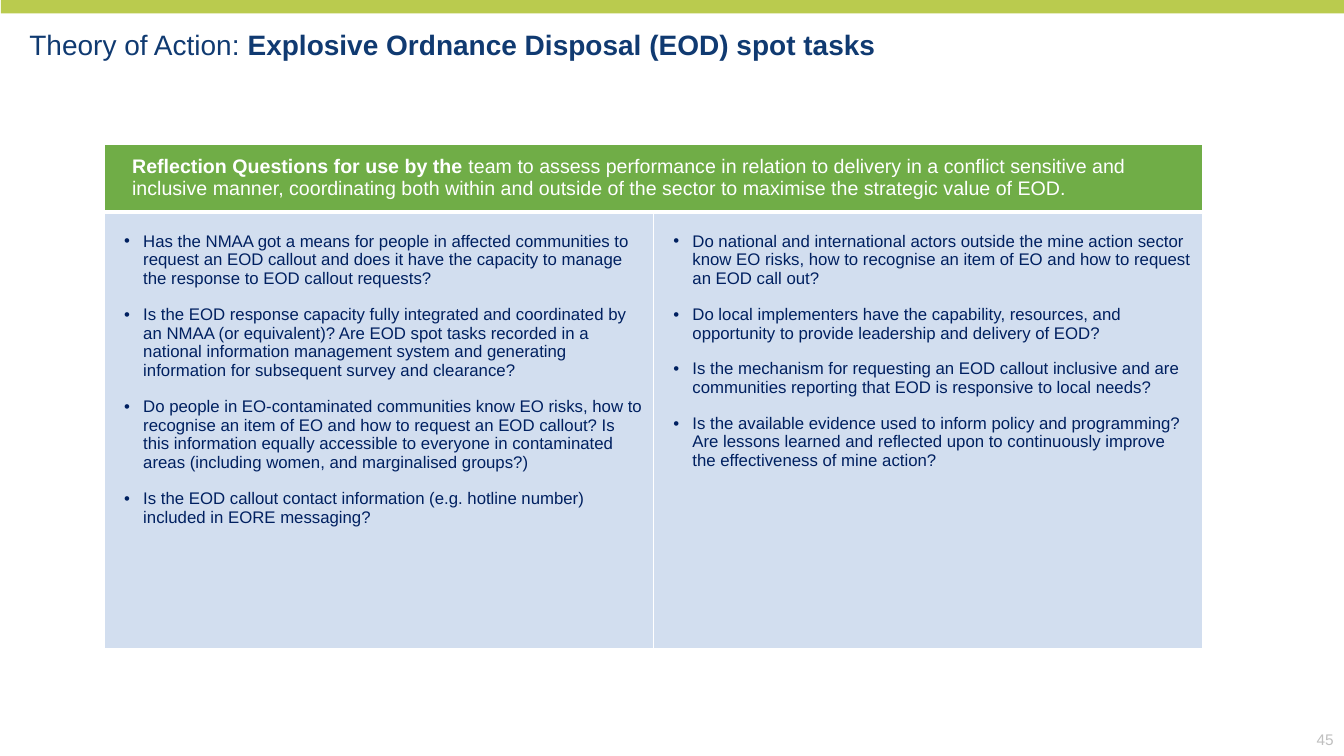
from lxml.etree import SubElement
from pptx import Presentation
from pptx.dml.color import RGBColor
from pptx.enum.shapes import MSO_SHAPE
from pptx.enum.text import MSO_ANCHOR, PP_ALIGN
from pptx.oxml.ns import qn
from pptx.util import Cm, Pt

# Content
TITLE = [("Theory of Action: ", False),
         ("Explosive Ordnance Disposal (EOD) spot tasks", True)]
HEADING = [
    ("Reflection Questions for use by the ", True),
    ("team to assess performance in relation to delivery in a conflict sensitive and "
     "inclusive manner, coordinating both within and outside of the sector to maximise "
     "the strategic value of EOD.", False),
]
QUESTIONS = [
    [
        "Has the NMAA got a means for people in affected communities to request an EOD "
        "callout and does it have the capacity to manage the response to EOD callout requests?",
        "Is the EOD response capacity fully integrated and coordinated by an NMAA (or "
        "equivalent)? Are EOD spot tasks recorded in a national information management "
        "system and generating information for subsequent survey and clearance?",
        "Do people in EO-contaminated communities know EO risks, how to recognise an item "
        "of EO and how to request an EOD callout? Is this information equally accessible to "
        "everyone in contaminated areas (including women, and marginalised groups?)",
        "Is the EOD callout contact information (e.g. hotline number) included in EORE "
        "messaging?",
    ],
    [
        "Do national and international actors outside the mine action sector know EO risks, "
        "how to recognise an item of EO and how to request an EOD call out?",
        "Do local implementers have the capability, resources, and opportunity to provide "
        "leadership and delivery of EOD?",
        "Is the mechanism for requesting an EOD callout inclusive and are communities "
        "reporting that EOD is responsive to local needs?",
        "Is the available evidence used to inform policy and programming? Are lessons "
        "learned and reflected upon to continuously improve the effectiveness of mine action?",
    ],
]
PAGE_NUMBER = "45"

FONT = "Arial"
WHITE, LIME, GREEN, PALE_BLUE = "FFFFFF", "BACB4E", "70AD47", "D2DEEF"
TITLE_BLUE, NAVY, GREY = "103A71", "002060", "BFBFBF"

# Sizes
PAGE_WIDTH, PAGE_HEIGHT = Cm(33.87), Cm(19.05)
COLUMN_WIDTH = Cm(13.84)
ROW_HEIGHTS = [Cm(1.7), Cm(11)]
BULLET_INDENT = Cm(0.48)


def color(value):
    return RGBColor.from_string(value)


def add_span(para, text, size, ink, bold=False):
    span = para.add_run()
    span.text = text
    span.font.name = FONT
    span.font.size = Pt(size)
    span.font.bold = bold
    span.font.color.rgb = color(ink)


def set_margins(target, left, top, right, bottom):
    target.margin_left, target.margin_top = Cm(left), Cm(top)
    target.margin_right, target.margin_bottom = Cm(right), Cm(bottom)


def add_box(page, left, top, width, height):
    box = page.shapes.add_textbox(Cm(left), Cm(top), Cm(width), Cm(height))
    box.text_frame.word_wrap = True
    return box.text_frame


def add_bullet(para):
    properties = para._p.get_or_add_pPr()
    properties.set("marL", str(BULLET_INDENT))
    properties.set("indent", str(-BULLET_INDENT))
    SubElement(properties, qn("a:buFont"), typeface=FONT)
    SubElement(properties, qn("a:buChar"), char="•")


def style_cell(cell, fill, bottom_width=1):
    # Borders come before the fill in the cell properties
    properties = cell._tc.get_or_add_tcPr()
    for side, width in (("L", 1), ("R", 1), ("T", 1), ("B", bottom_width)):
        line = SubElement(properties, qn(f"a:ln{side}"), w=str(Pt(width)))
        SubElement(SubElement(line, qn("a:solidFill")), qn("a:srgbClr"), val=WHITE)
    cell.fill.solid()
    cell.fill.fore_color.rgb = color(fill)


deck = Presentation()
deck.slide_width, deck.slide_height = PAGE_WIDTH, PAGE_HEIGHT
page = deck.slides.add_slide(deck.slide_layouts[6])

# Question table
table = page.shapes.add_table(2, 2, Cm(2.63), Cm(3.63),
                              2 * COLUMN_WIDTH, sum(ROW_HEIGHTS)).table
table.first_row = table.horz_banding = False
for column in table.columns:
    column.width = COLUMN_WIDTH
for row, height in zip(table.rows, ROW_HEIGHTS):
    row.height = height

# Heading row
for cell in table.rows[0].cells:
    style_cell(cell, GREEN, bottom_width=3)
heading = table.cell(0, 0)
heading.merge(table.cell(0, 1))
set_margins(heading, 0.7, 0.3, 0.25, 0.3)
for text, bold in HEADING:
    add_span(heading.text_frame.paragraphs[0], text, 14, WHITE, bold)

# Question columns
for cell, questions in zip(table.rows[1].cells, QUESTIONS):
    style_cell(cell, PALE_BLUE)
    set_margins(cell, 0.5, 0.5, 0.25, 0.13)
    for number, question in enumerate(questions):
        frame = cell.text_frame
        para = frame.add_paragraph() if number else frame.paragraphs[0]
        para.space_after = Pt(12)
        add_bullet(para)
        add_span(para, question, 12, NAVY)

# Top band
band = page.shapes.add_shape(MSO_SHAPE.RECTANGLE, Cm(0.02), Cm(-0.02), PAGE_WIDTH, Cm(0.36))
band.shadow.inherit = False
band.fill.solid()
band.fill.fore_color.rgb = color(LIME)
band.line.fill.background()

# Title
title = add_box(page, 0.74, 0.69, 31.8, 0.86)
set_margins(title, 0, 0, 0, 0)
for text, bold in TITLE:
    add_span(title.paragraphs[0], text, 20, TITLE_BLUE, bold)

# Page number
footer = add_box(page, 32.69, 18.21, 1.17, 0.84)
footer.vertical_anchor = MSO_ANCHOR.MIDDLE
footer.paragraphs[0].alignment = PP_ALIGN.RIGHT
add_span(footer.paragraphs[0], PAGE_NUMBER, 11, GREY)

deck.save("out.pptx")
